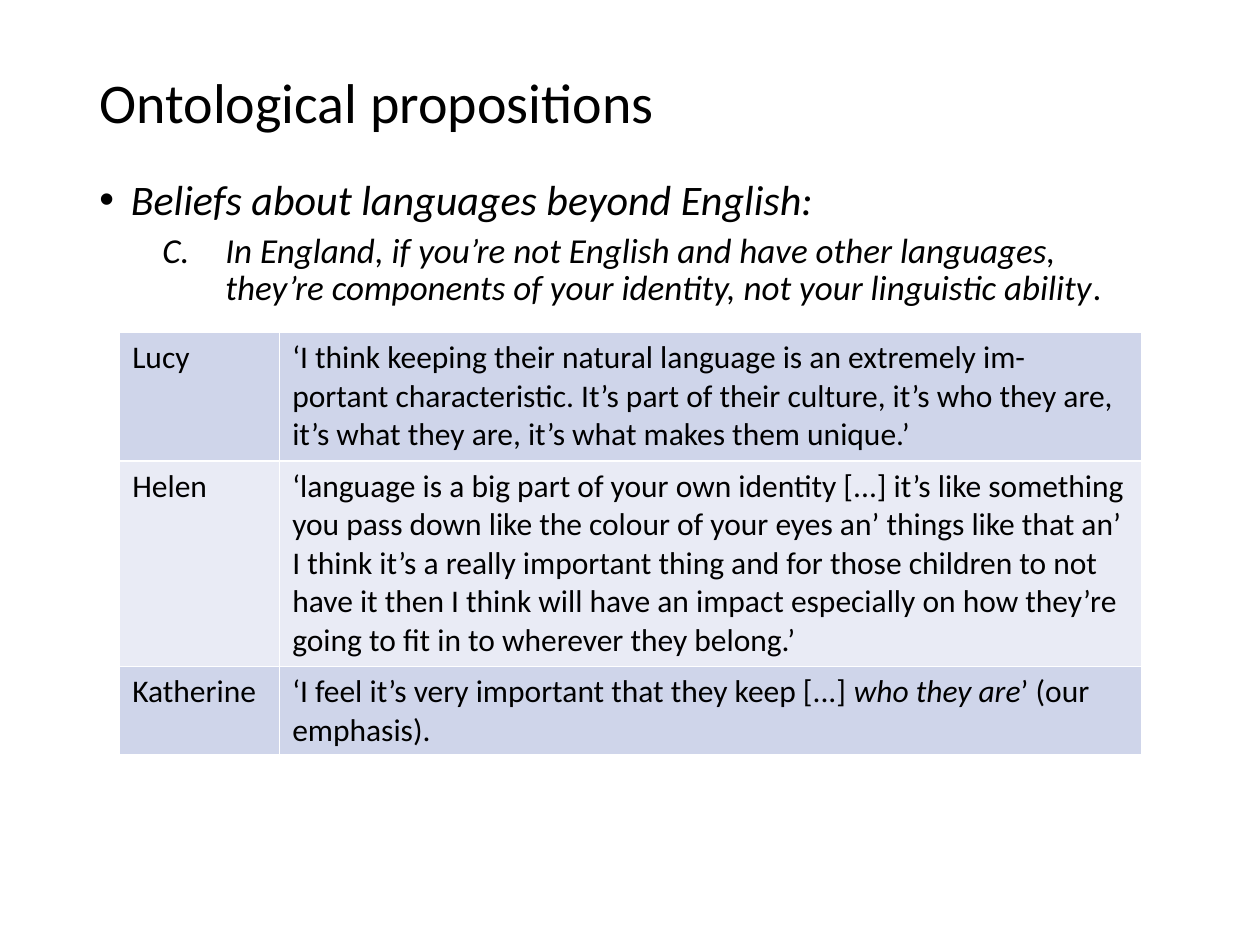
from lxml import etree
from pptx import Presentation
from pptx import util as u
from pptx.dml.color import RGBColor
from pptx.enum import text
from pptx.oxml.ns import qn

FONT, INK, WHITE = "Calibri", "000000", "FFFFFF"
BAND_FILLS = ["CFD5EA", "E9EBF5"]
TITLE = "Ontological propositions"
BELIEF = "Beliefs about languages beyond English:"
# A paragraph is a list of (wording, italic) runs.
PROPOSITION = [
    ("In England, if you’re not English and have other languages, they’re "
     "components of your identity, not your linguistic ability", True),
    (".", False),
]
QUOTES = [
    ("Lucy", [("‘I think keeping their natural language is an extremely im- portant "
               "characteristic. It’s part of their culture, it’s who they are, it’s what "
               "they are, it’s what makes them unique.’", False)]),
    ("Helen", [("‘language is a big part of your own identity [...] it’s like something "
                "you pass down like the colour of your eyes an’ things like that an’ I "
                "think it’s a really important thing and for those children to not have "
                "it then I think will have an impact especially on how they’re going to "
                "fit in to wherever they belong.’", False)]),
    ("Katherine", [("‘I feel it’s very important that they keep [...] ", False),
                   ("who they are", True),
                   ("’ (our emphasis).", False)]),
]
MARGIN, TEXT_WIDTH = 0.69, 8.62
TABLE_LEFT, TABLE_TOP = 0.95, 2.64
COLUMN_WIDTHS = [1.27, 6.84]
ROW_HEIGHTS = [1.02, 1.63, 0.7]


def colour(value):
    return RGBColor.from_string(value)


def write(paragraph, runs, size, **paragraph_format):
    for name, value in paragraph_format.items():
        setattr(paragraph, name, value)
    for wording, italic in runs:
        run = paragraph.add_run()
        run.text = wording
        for name, value in dict(name=FONT, size=u.Pt(size), italic=italic).items():
            setattr(run.font, name, value)
        run.font.color.rgb = colour(INK)


def add_bullet(paragraph, left, hanging, tag, **attributes):
    properties = paragraph._p.get_or_add_pPr()
    properties.set("marL", str(u.Inches(left)))
    properties.set("indent", str(-u.Inches(hanging)))
    if tag == "a:buChar":
        etree.SubElement(properties, qn("a:buFont"), typeface="Arial")
    etree.SubElement(properties, qn(tag), **attributes)


def add_text_frame(slide, top, height, anchor):
    box = slide.shapes.add_textbox(*map(u.Inches, (MARGIN, top, TEXT_WIDTH, height)))
    box.text_frame.word_wrap = True
    box.text_frame.vertical_anchor = anchor
    return box.text_frame


def add_borders(cell):
    """Draw a thin white line on all four sides, ahead of the cell's fill."""
    properties = cell._tc.get_or_add_tcPr()
    for position, side in enumerate(("a:lnL", "a:lnR", "a:lnT", "a:lnB")):
        line = etree.Element(qn(side), w=str(u.Pt(1)))
        fill = etree.SubElement(line, qn("a:solidFill"))
        etree.SubElement(fill, qn("a:srgbClr"), val=WHITE)
        properties.insert(position, line)


def add_quotes(slide):
    size = (sum(COLUMN_WIDTHS), sum(ROW_HEIGHTS))
    table = slide.shapes.add_table(
        len(QUOTES), len(COLUMN_WIDTHS),
        *map(u.Inches, (TABLE_LEFT, TABLE_TOP, *size))).table
    table.first_row = False
    for column, width in zip(table.columns, COLUMN_WIDTHS):
        column.width = u.Inches(width)
    for index, (speaker, quote) in enumerate(QUOTES):
        row = table.rows[index]
        row.height = u.Inches(ROW_HEIGHTS[index])
        for cell, runs in zip(row.cells, ([(speaker, False)], quote)):
            cell.fill.solid()
            cell.fill.fore_color.rgb = colour(BAND_FILLS[index % 2])
            add_borders(cell)
            write(cell.text_frame.paragraphs[0], runs, 18)


def main():
    presentation = Presentation()
    presentation.slide_width, presentation.slide_height = u.Inches(10), u.Inches(7.5)
    slide = presentation.slides.add_slide(presentation.slide_layouts[6])

    title = add_text_frame(slide, 0.4, 0.87, text.MSO_ANCHOR.MIDDLE)
    write(title.paragraphs[0], [(TITLE, False)], 32, line_spacing=0.9)

    body = add_text_frame(slide, 1.37, 4.85, text.MSO_ANCHOR.TOP)
    belief, proposition = body.paragraphs[0], body.add_paragraph()
    add_bullet(belief, 0.25, 0.25, "a:buChar", char="•")
    write(belief, [(BELIEF, True)], 24, line_spacing=0.9)
    add_bullet(proposition, 1, 0.5, "a:buAutoNum", type="alphaUcPeriod", startAt="3")
    write(proposition, PROPOSITION, 20, level=1, line_spacing=0.9, space_before=u.Pt(5))

    add_quotes(slide)
    presentation.save("out.pptx")


if __name__ == "__main__":
    main()
